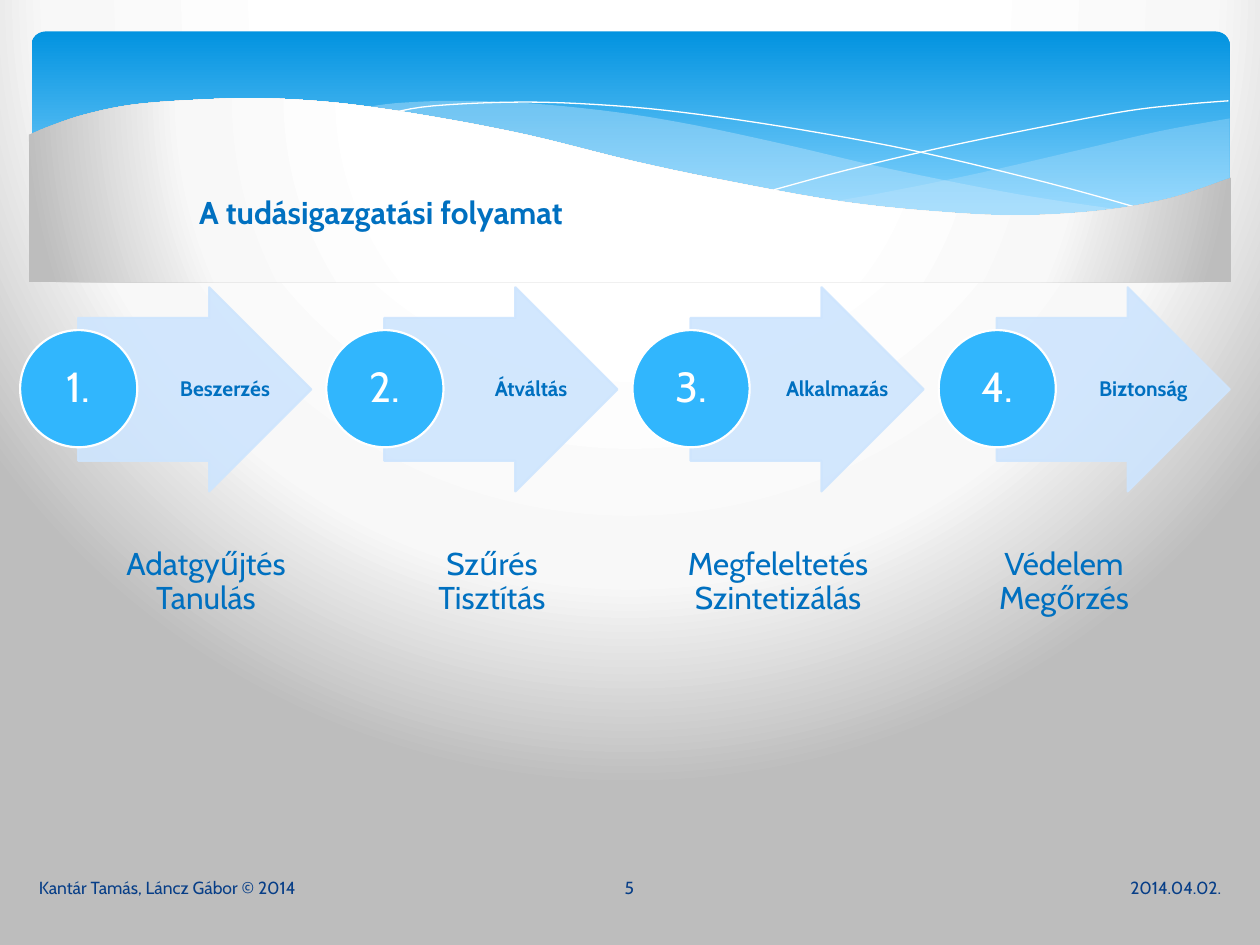
from dataclasses import dataclass

import lxml.etree
import pptx
import pptx.dml.color
import pptx.enum.shapes
import pptx.enum.text
import pptx.oxml.ns
import pptx.util

Inches = pptx.util.Inches
Pt = pptx.util.Pt
qn = pptx.oxml.ns.qn
Shape = pptx.enum.shapes.MSO_SHAPE
Align = pptx.enum.text.PP_ALIGN
Anchor = pptx.enum.text.MSO_ANCHOR


@dataclass(frozen=True)
class Theme:
    font: str = "Cabin"
    text: str = "0070C0"
    footer: str = "073E87"
    white: str = "FFFFFF"
    arrow: str = "CEE5FE"
    circle: str = "31B6FD"
    ribbon: str = "C6E7FC"
    banner: tuple = ((0, "0293E0"), (90, "83D3FE"))
    glow: tuple = ((40, "FFFFFF"), (74, "F8F8F8"), (100, "BDBDBD"))
    heading_size: int = 18
    label_size: int = 12
    number_size: int = 24
    footer_size: int = 10


def color(value):
    return pptx.dml.color.RGBColor.from_string(value)


def smooth(points, steps=5):
    padded = [points[0], *points, points[-1]]
    curve = [points[0]]
    for a, b, c, d in zip(padded, padded[1:], padded[2:], padded[3:]):
        for step in range(1, steps + 1):
            t = step / steps
            curve.append(tuple(
                0.5 * (2 * q + (r - p) * t + (2 * p - 5 * q + 4 * r - s) * t**2
                       + (3 * q - p - 3 * r + s) * t**3)
                for p, q, r, s in zip(a, b, c, d)))
    return curve


class Painter:
    def __init__(self, page, theme):
        self.page = page
        self.theme = theme

    def gradient(self, fill, owner, stops, radial=False):
        fill.gradient()
        grad = next(owner.iter(qn("a:gradFill")))
        for child in list(grad):
            grad.remove(child)
        stop_list = lxml.etree.SubElement(grad, qn("a:gsLst"))
        for place, value in stops:
            stop = lxml.etree.SubElement(stop_list, qn("a:gs"), pos=str(place * 1000))
            lxml.etree.SubElement(stop, qn("a:srgbClr"), val=value)
        if radial:
            way = lxml.etree.SubElement(grad, qn("a:path"), path="circle")
            lxml.etree.SubElement(way, qn("a:fillToRect"), l="20000", t="-40000",
                                  r="20000", b="140000")
        else:
            lxml.etree.SubElement(grad, qn("a:lin"), ang="5400000", scaled="0")

    def background(self):
        self.gradient(self.page.background.fill, self.page.element, self.theme.glow, True)

    def paint(self, shape, fill=None, line=None, width=0, alpha=100):
        shape.shadow.inherit = False
        for part, value in ((shape.fill, fill), (shape.line.fill, line)):
            if value:
                part.solid()
                part.fore_color.rgb = color(value)
            else:
                part.background()
        if line:
            shape.line.width = Pt(width)
        if alpha < 100:
            for tint in shape.element.spPr.iter(qn("a:srgbClr")):
                lxml.etree.SubElement(tint, qn("a:alpha"), val=str(alpha * 1000))

    def preset(self, kind, box, adjustments=(), **style):
        shape = self.page.shapes.add_shape(kind, *map(Inches, box))
        for index, value in enumerate(adjustments):
            shape.adjustments[index] = value
        self.paint(shape, **style)
        return shape

    def outline(self, points, close=True, **style):
        (left, top), *rest = [tuple(map(Inches, point)) for point in points]
        builder = self.page.shapes.build_freeform(left, top)
        builder.add_line_segments(rest, close=close)
        shape = builder.convert_to_shape()
        self.paint(shape, **style)
        return shape

    def fill_text(self, shape, words, size, ink, align=Align.LEFT, anchor=Anchor.TOP,
                  bold=False, spacing=1.0, margins=(0.1, 0.05), wrap=True):
        frame = shape.text_frame
        frame.word_wrap = wrap
        frame.vertical_anchor = anchor
        frame.margin_left = frame.margin_right = Inches(margins[0])
        frame.margin_top = frame.margin_bottom = Inches(margins[1])
        para = frame.paragraphs[0]
        para.alignment = align
        para.line_spacing = spacing
        for index, words_in_line in enumerate(words.split("\n")):
            if index:
                para.add_line_break()
            span = para.add_run()
            span.text = words_in_line
            span.font.name = self.theme.font
            span.font.size = Pt(size)
            span.font.bold = bold
            span.font.color.rgb = color(ink)

    def text(self, box, words, size, ink, **style):
        self.fill_text(self.page.shapes.add_textbox(*map(Inches, box)), words, size, ink, **style)

    def title(self, box, words):
        title = self.page.shapes.title
        title.left, title.top, title.width, title.height = map(Inches, box)
        self.fill_text(title, words, self.theme.heading_size, self.theme.text,
                       bold=True, wrap=False)
        title.text_frame.auto_size = pptx.enum.text.MSO_AUTO_SIZE.NONE
        title.element.getparent().append(title.element)

    def banner(self):
        theme = self.theme
        band = self.preset(Shape.ROUNDED_RECTANGLE, (0.25, 0.25, 9.51, 1.56), (0.071,))
        self.gradient(band.fill, band.element, theme.banner)
        right_ribbon = (
            smooth([(9.76, 0.94), (9.21, 1.04), (8.61, 1.18), (7.79, 1.37), (7.06, 1.52), (6.61, 1.6)])
            + smooth([(6.61, 1.6), (7.19, 1.67), (7.81, 1.72), (8.35, 1.72), (8.81, 1.67),
                      (9.28, 1.58), (9.76, 1.41)]))
        left_ribbon = (
            smooth([(8.93, 1.67), (8.07, 1.54), (7.06, 1.34), (6.29, 1.16), (5.55, 1), (4.89, 0.89),
                    (4.2, 0.82), (3.61, 0.8), (3.13, 0.82), (2.86, 0.86)])
            + smooth([(2.86, 0.86), (3.62, 0.97), (4.49, 1.16), (5.66, 1.43), (6.5, 1.58),
                      (7.22, 1.68), (7.85, 1.72), (8.38, 1.72), (8.93, 1.67)]))
        self.outline(right_ribbon, fill=theme.ribbon, alpha=29)
        self.outline(left_ribbon, fill=theme.ribbon, alpha=40)
        falling = [(3.09, 0.9), (3.44, 0.84), (4.16, 0.81), (4.89, 0.84), (5.56, 0.91),
                   (6.36, 1.03), (7.27, 1.2), (8.31, 1.45), (9.07, 1.66)]
        rising = [(6.13, 1.51), (6.72, 1.35), (7.48, 1.17), (8.36, 0.99), (8.95, 0.88),
                  (9.38, 0.83), (9.75, 0.8)]
        for strand in (falling, rising):
            self.outline(smooth(strand), close=False, line=theme.white)
        crest = [(9.77, 1.41), (9.3, 1.57), (8.75, 1.67), (8.09, 1.71), (7.44, 1.68), (6.68, 1.6),
                 (5.79, 1.44), (5.03, 1.28), (4.18, 1.07), (3.4, 0.92), (2.71, 0.82), (2.11, 0.78),
                 (1.61, 0.79), (1.06, 0.83), (0.67, 0.91), (0.4, 1), (0.23, 1.07)]
        wave = self.outline(smooth(crest) + [(0.23, 2.24), (9.77, 2.24)])
        self.gradient(wave.fill, wave.element, theme.glow, True)

    def stage(self, index, label, caption):
        theme = self.theme
        left = 0.16 + 2.43 * index
        centred = {"align": Align.CENTER, "spacing": 0.9}
        self.text((0.6 + 2.27 * index, 4.21, 2.07, 2.66), caption, theme.heading_size,
                  theme.text, margins=(0.14, 0.14), **centred)
        self.preset(Shape.RIGHT_ARROW, (left + 0.46, 2.28, 1.85, 1.62), (0.7, 0.5),
                    fill=theme.arrow, line=theme.arrow, width=1.25, alpha=90)
        self.text((left + 0.93, 2.28, 1.39, 1.62), label, theme.label_size, theme.text,
                  bold=True, anchor=Anchor.MIDDLE, margins=(0.02, 0.01), **centred)
        circle = self.preset(Shape.OVAL, (left, 2.62, 0.93, 0.93), fill=theme.circle,
                             line=theme.white, width=1.25)
        self.fill_text(circle, f"{index + 1}.", theme.number_size, theme.white,
                       anchor=Anchor.MIDDLE, margins=(0.02, 0.02), **centred)

    def footer(self, left, width, words, align):
        self.text((left, 6.84, width, 0.4), words, self.theme.footer_size, self.theme.footer,
                  align=align, anchor=Anchor.MIDDLE)


def main():
    deck = pptx.Presentation()
    deck.slide_width, deck.slide_height = Inches(10), Inches(7.5)
    painter = Painter(deck.slides.add_slide(deck.slide_layouts[5]), Theme())
    painter.background()
    painter.banner()
    painter.footer(5.65, 4.14, "2014.04.02.", Align.RIGHT)
    painter.footer(0.21, 4.14, "Kantár Tamás, Láncz Gábor © 2014", Align.LEFT)
    painter.footer(4.36, 1.27, "5", Align.CENTER)
    stages = [
        ("Beszerzés", "Adatgyűjtés Tanulás"),
        ("Átváltás", "Szűrés\nTisztítás"),
        ("Alkalmazás", "Megfeleltetés Szintetizálás"),
        ("Biztonság", "Védelem\nMegőrzés"),
    ]
    for index, (label, caption) in enumerate(stages):
        painter.stage(index, label, caption)
    painter.title((1.48, 1.48, 3.12, 0.4), "A tudásigazgatási folyamat")
    deck.save("out.pptx")


if __name__ == "__main__":
    main()
